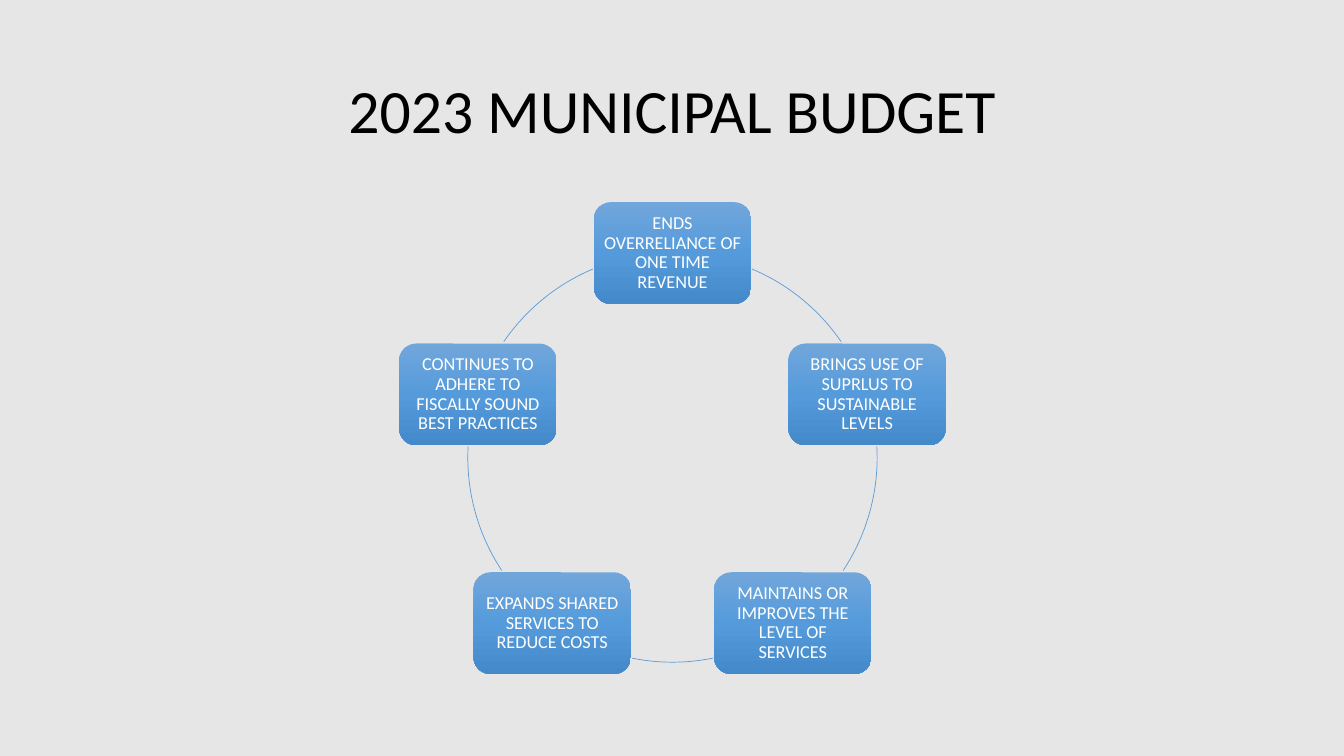
"""Build the 2023 municipal budget slide: five goals around a circle."""
from copy import deepcopy
from math import cos, radians, sin

from pptx import Presentation
from pptx.dml.color import RGBColor
from pptx.enum import shapes, text
from pptx.oxml.ns import qn
from pptx.util import Inches, Pt

TITLE = "2023 MUNICIPAL BUDGET"
GOALS = [
    "ENDS OVERRELIANCE OF ONE TIME REVENUE",
    "BRINGS USE OF SUPRLUS TO SUSTAINABLE LEVELS",
    "MAINTAINS OR IMPROVES THE LEVEL OF SERVICES",
    "EXPANDS SHARED SERVICES TO REDUCE COSTS",
    "CONTINUES TO ADHERE TO FISCALLY SOUND BEST PRACTICES",
]
LINK_ANGLES = [(292.9, 325.5), (356.9, 33.5), (78.6, 101.4), (146.5, 183.1), (214.5, 247.1)]

THEME = {
    "font": "Calibri",
    "title_size": 44,
    "goal_size": 13,
    "background": "E7E6E6",
    "title": "000000",
    "goal": "FFFFFF",
    "link": "5B9BD5",
    "gradient": [(0, "71A6DB"), (0.5, "559BDB"), (1, "448ACA")],
}
CENTER_X, CENTER_Y, RADIUS = 6.67, 4.54, 2.03
GOAL_W, GOAL_H = 1.56, 1.01


def write(shape, words, *, size, color, inset_x, inset_y):
    """Put one centred paragraph into a shape."""
    frame = shape.text_frame
    frame.word_wrap = True
    frame.vertical_anchor = text.MSO_ANCHOR.MIDDLE
    frame.margin_left = frame.margin_right = Inches(inset_x)
    frame.margin_top = frame.margin_bottom = Inches(inset_y)
    paragraph = frame.paragraphs[0]
    paragraph.alignment = text.PP_ALIGN.CENTER
    paragraph.line_spacing = 0.9
    run = paragraph.add_run()
    run.text = words
    run.font.name = THEME["font"]
    run.font.size = Pt(size)
    run.font.color.rgb = RGBColor.from_string(color)


def fill_gradient(shape):
    """Shade a shape from top to bottom with the theme gradient."""
    shape.fill.gradient()
    shape.fill.gradient_angle = 270
    stop_list = shape._element.spPr.find(qn("a:gradFill")).find(qn("a:gsLst"))
    stop_list.insert(1, deepcopy(stop_list[0]))
    for stop, (position, color) in zip(shape.fill.gradient_stops, THEME["gradient"]):
        stop.position = position
        stop.color.rgb = RGBColor.from_string(color)


def add_goal(slide, index, words):
    """Place one goal at its fifth of the circle."""
    angle = radians(-90 + index * 360 / len(GOALS))
    left = CENTER_X + RADIUS * cos(angle) - GOAL_W / 2
    top = CENTER_Y + RADIUS * sin(angle) - GOAL_H / 2
    goal = slide.shapes.add_shape(
        shapes.MSO_SHAPE.ROUNDED_RECTANGLE,
        Inches(left), Inches(top), Inches(GOAL_W), Inches(GOAL_H))
    goal.shadow.inherit = False
    goal.line.fill.background()
    fill_gradient(goal)
    write(goal, words, size=THEME["goal_size"], color=THEME["goal"], inset_x=0.05, inset_y=0.05)


def add_link(slide, start, end):
    """Draw the part of the circle between two goals, angles in degrees."""
    link = slide.shapes.add_shape(
        shapes.MSO_SHAPE.ARC, Inches(CENTER_X - RADIUS), Inches(CENTER_Y - RADIUS),
        Inches(2 * RADIUS), Inches(2 * RADIUS))
    link.adjustments[0] = start * 0.6
    link.adjustments[1] = end * 0.6
    link.shadow.inherit = False
    link.fill.background()
    link.line.color.rgb = RGBColor.from_string(THEME["link"])
    link.line.width = Pt(0.5)


def main():
    """Build and save the slide."""
    deck = Presentation()
    deck.slide_width, deck.slide_height = Inches(13.33), Inches(7.5)
    slide = deck.slides.add_slide(deck.slide_layouts[6])
    slide.background.fill.solid()
    slide.background.fill.fore_color.rgb = RGBColor.from_string(THEME["background"])

    title = slide.shapes.add_textbox(Inches(0.92), Inches(0.4), Inches(11.5), Inches(1.45))
    write(title, TITLE, size=THEME["title_size"], color=THEME["title"], inset_x=0.1, inset_y=0.05)

    for index, (words, (start, end)) in enumerate(zip(GOALS, LINK_ANGLES)):
        add_goal(slide, index, words)
        add_link(slide, start, end)

    deck.save("out.pptx")


if __name__ == "__main__":
    main()
